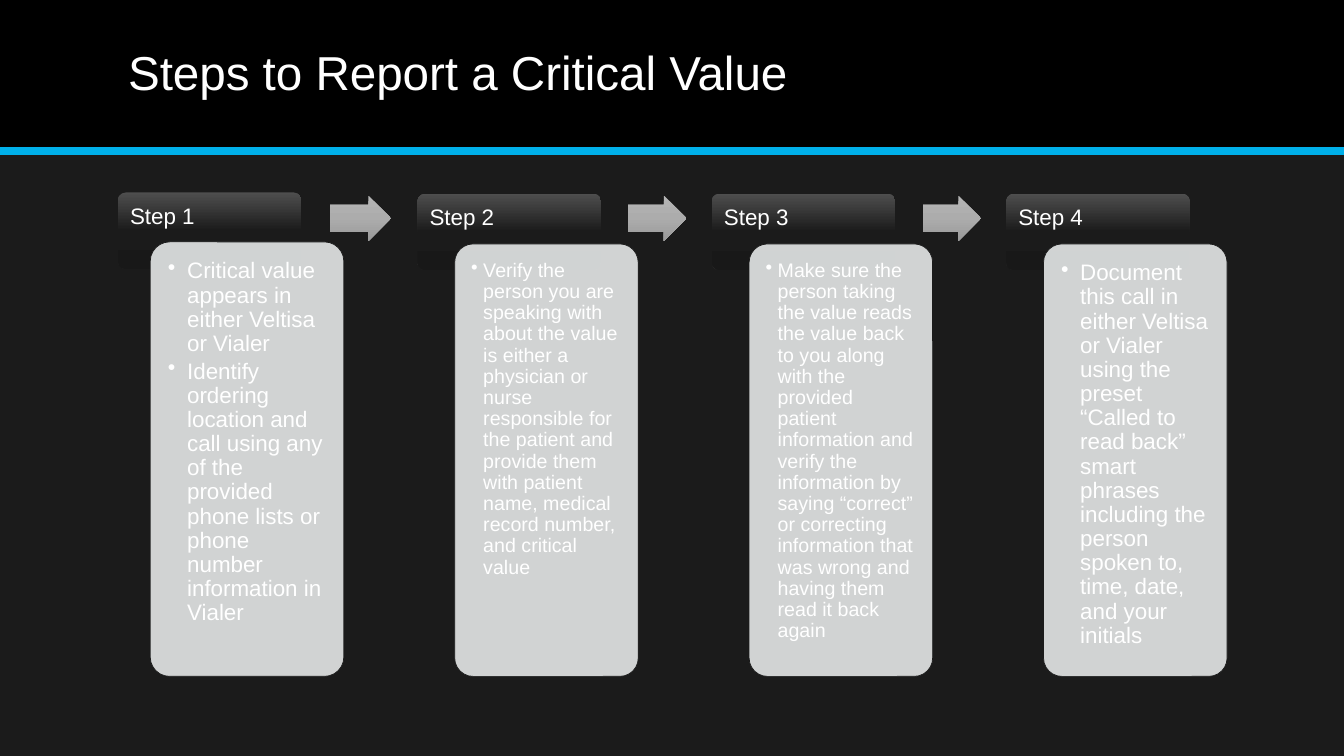
from dataclasses import dataclass

from lxml import etree
from pptx import Presentation
from pptx.dml.color import RGBColor
from pptx.enum.shapes import MSO_CONNECTOR, MSO_SHAPE
from pptx.enum.text import MSO_ANCHOR, MSO_AUTO_SIZE, PP_ALIGN
from pptx.oxml.ns import qn
from pptx.util import Inches, Pt

RECTANGLE = MSO_SHAPE.RECTANGLE
ROUNDED = MSO_SHAPE.ROUNDED_RECTANGLE
RIGHT_ARROW = MSO_SHAPE.RIGHT_ARROW
STRAIGHT = MSO_CONNECTOR.STRAIGHT
TOP, MIDDLE = MSO_ANCHOR.TOP, MSO_ANCHOR.MIDDLE
LEFT = PP_ALIGN.LEFT
NO_AUTOFIT = MSO_AUTO_SIZE.NONE

FONT = "Arial"
COLORS = {
    "background": "1B1B1B",
    "band": "000000",
    "accent": "00B0EA",
    "text": "FFFFFF",
    "card": "E5E8E8",
}
HEADER_GRADIENT = ("4E4E4E", "1B1B1B", "181818")
ARROW_GRADIENT = ("B5B5B5", "ACACAC", "999999")
SLIDE_WIDTH, SLIDE_HEIGHT = 13.33, 7.5
BAND_HEIGHT = 1.5
STEP_PITCH = 2.92


@dataclass(frozen=True)
class Box:
    left: float
    top: float
    width: float
    height: float

    def lengths(self) -> tuple:
        return tuple(Inches(v) for v in (self.left, self.top, self.width, self.height))


@dataclass(frozen=True)
class Step:
    label: str
    header: Box
    card: Box
    bullets: tuple
    size: int
    inset: float
    indent: float
    arrow: Box | None = None


def later_step(number: int, text: str, size: int, inset: float, indent: float) -> Step:
    """Steps 2 to 4 share one layout, repeated at a constant pitch."""
    shift = (number - 2) * STEP_PITCH
    return Step(
        f"Step {number}",
        Box(4.14 + shift, 1.92, 1.82, 0.76),
        Box(4.51 + shift, 2.42, 1.82, 4.29),
        (text,), size, inset, indent,
        Box(6.23 + shift, 1.94, 0.58, 0.45) if number < 4 else None,
    )


STEPS = (
    Step(
        "Step 1",
        Box(1.17, 1.91, 1.82, 0.76),
        Box(1.49, 2.4, 1.92, 4.31),
        (
            "Critical value appears in either Veltisa or Vialer",
            "Identify ordering location and call using any of the provided "
            "phone lists or phone number information in Vialer",
        ),
        16, 0.12, 0.19,
        Box(3.27, 1.94, 0.61, 0.45),
    ),
    later_step(
        2,
        "Verify the person you are speaking with about the value is either a "
        "physician or nurse responsible for the patient and provide them with "
        "patient name, medical record number, and critical value",
        14, 0.11, 0.12,
    ),
    later_step(
        3,
        "Make sure the person taking the value reads the value back to you along "
        "with the provided patient information and verify the information by "
        "saying “correct” or correcting information that was wrong and having "
        "them read it back again",
        14, 0.11, 0.12,
    ),
    later_step(
        4,
        "Document this call in either Veltisa or Vialer using the preset “Called "
        "to read back” smart phrases including the person spoken to, time, date, "
        "and your initials",
        16, 0.12, 0.19,
    ),
)


def color(name: str) -> RGBColor:
    return RGBColor.from_string(COLORS[name])


def add_plain_shape(slide, kind, box: Box, adjustments: tuple = ()):
    shape = slide.shapes.add_shape(kind, *box.lengths())
    shape.shadow.inherit = False
    shape.line.fill.background()
    for index, value in enumerate(adjustments):
        shape.adjustments[index] = value
    return shape


def fill_solid(shape, name: str) -> None:
    shape.fill.solid()
    shape.fill.fore_color.rgb = color(name)


def fill_gradient(shape, stops: tuple) -> None:
    """Fill from top to bottom with evenly spaced colours."""
    shape.fill.gradient()
    shape.fill.gradient_angle = 270
    stop_list = shape._element.spPr.find(qn("a:gradFill")).find(qn("a:gsLst"))
    for old_stop in list(stop_list):
        stop_list.remove(old_stop)
    for index, value in enumerate(stops):
        position = str(round(100000 * index / (len(stops) - 1)))
        stop = etree.SubElement(stop_list, qn("a:gs"), pos=position)
        etree.SubElement(stop, qn("a:srgbClr"), val=value)


def prepare_frame(shape, anchor, insets: tuple):
    frame = shape.text_frame
    frame.word_wrap = True
    frame.auto_size = NO_AUTOFIT
    frame.vertical_anchor = anchor
    (frame.margin_left, frame.margin_top,
     frame.margin_right, frame.margin_bottom) = (Inches(v) for v in insets)
    return frame


def format_paragraph(paragraph, size: int, space_after: float = 0) -> None:
    paragraph.alignment = LEFT
    paragraph.line_spacing = 0.9
    paragraph.space_before = Pt(0)
    paragraph.space_after = Pt(space_after)
    paragraph.font.name = FONT
    paragraph.font.size = Pt(size)
    paragraph.font.color.rgb = color("text")


def add_bullet(paragraph, indent: float) -> None:
    properties = paragraph._p.get_or_add_pPr()
    properties.set("marL", str(Inches(indent)))
    properties.set("indent", str(-Inches(indent)))
    etree.SubElement(properties, qn("a:buChar"), char="•")


def add_title_area(slide) -> None:
    band = add_plain_shape(slide, RECTANGLE, Box(0, 0, SLIDE_WIDTH, BAND_HEIGHT))
    fill_solid(band, "band")
    rule = slide.shapes.add_connector(
        STRAIGHT, 0, Inches(BAND_HEIGHT), Inches(SLIDE_WIDTH), Inches(BAND_HEIGHT))
    rule.line.color.rgb = color("accent")
    rule.line.width = Pt(6)
    etree.SubElement(rule._element.spPr, qn("a:effectLst"))

    title = slide.shapes.title
    title.left, title.top, title.width, title.height = Box(1.17, 0.14, 11, 1.2).lengths()
    frame = prepare_frame(title, MIDDLE, (0.1, 0.05, 0.1, 0.05))
    frame.text = "Steps to Report a Critical Value"
    format_paragraph(frame.paragraphs[0], 34)
    slide.shapes._spTree.append(title._element)  # in front of the band


def add_step(slide, step: Step) -> None:
    # Header tab
    header = add_plain_shape(slide, ROUNDED, step.header, (0.1,))
    fill_gradient(header, HEADER_GRADIENT)
    frame = prepare_frame(header, TOP, (0.1, 0.1, 0.1, 0.07))
    frame.text = step.label
    format_paragraph(frame.paragraphs[0], 16)

    # Translucent card with bullets
    card = add_plain_shape(slide, ROUNDED, step.card, (0.1,))
    fill_solid(card, "card")
    fill_color = card._element.spPr.find(qn("a:solidFill"))[0]
    etree.SubElement(fill_color, qn("a:alpha"), val="90000")
    card.line.color.rgb = color("background")
    card.line.width = Pt(0.5)
    frame = prepare_frame(card, TOP, (step.inset,) * 4)
    for index, text in enumerate(step.bullets):
        paragraph = frame.add_paragraph() if index else frame.paragraphs[0]
        paragraph.text = text
        paragraph.level = 1
        add_bullet(paragraph, step.indent)
        format_paragraph(paragraph, step.size, 0.15 * step.size)

    # Arrow to the next step
    if step.arrow:
        arrow = add_plain_shape(slide, RIGHT_ARROW, step.arrow, (0.6, 0.5))
        fill_gradient(arrow, ARROW_GRADIENT)


def main() -> None:
    presentation = Presentation()
    presentation.slide_width = Inches(SLIDE_WIDTH)
    presentation.slide_height = Inches(SLIDE_HEIGHT)
    slide = presentation.slides.add_slide(presentation.slide_layouts[5])
    fill_solid(slide.background, "background")
    add_title_area(slide)
    for step in STEPS:
        add_step(slide, step)
    presentation.save("out.pptx")


if __name__ == "__main__":
    main()
